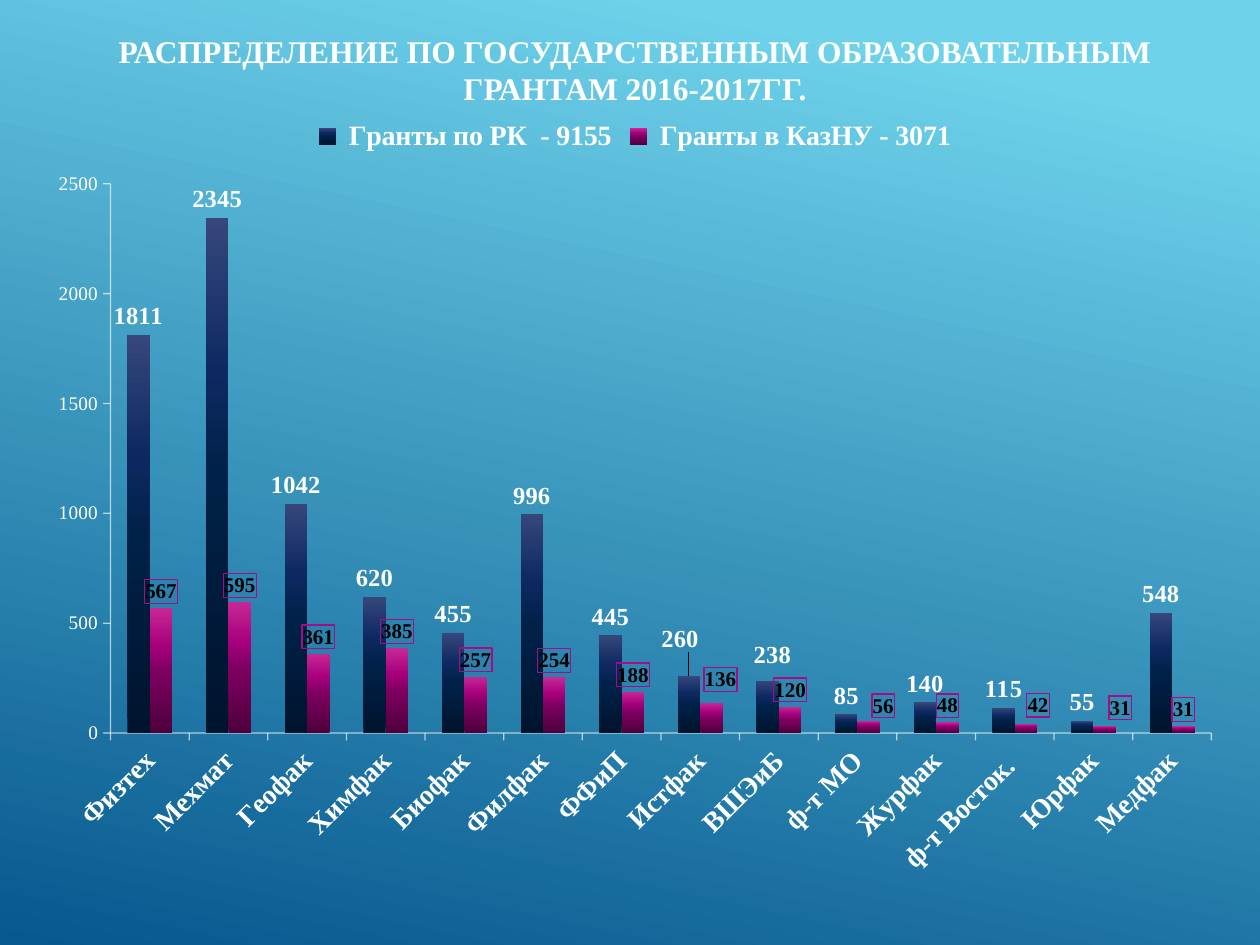
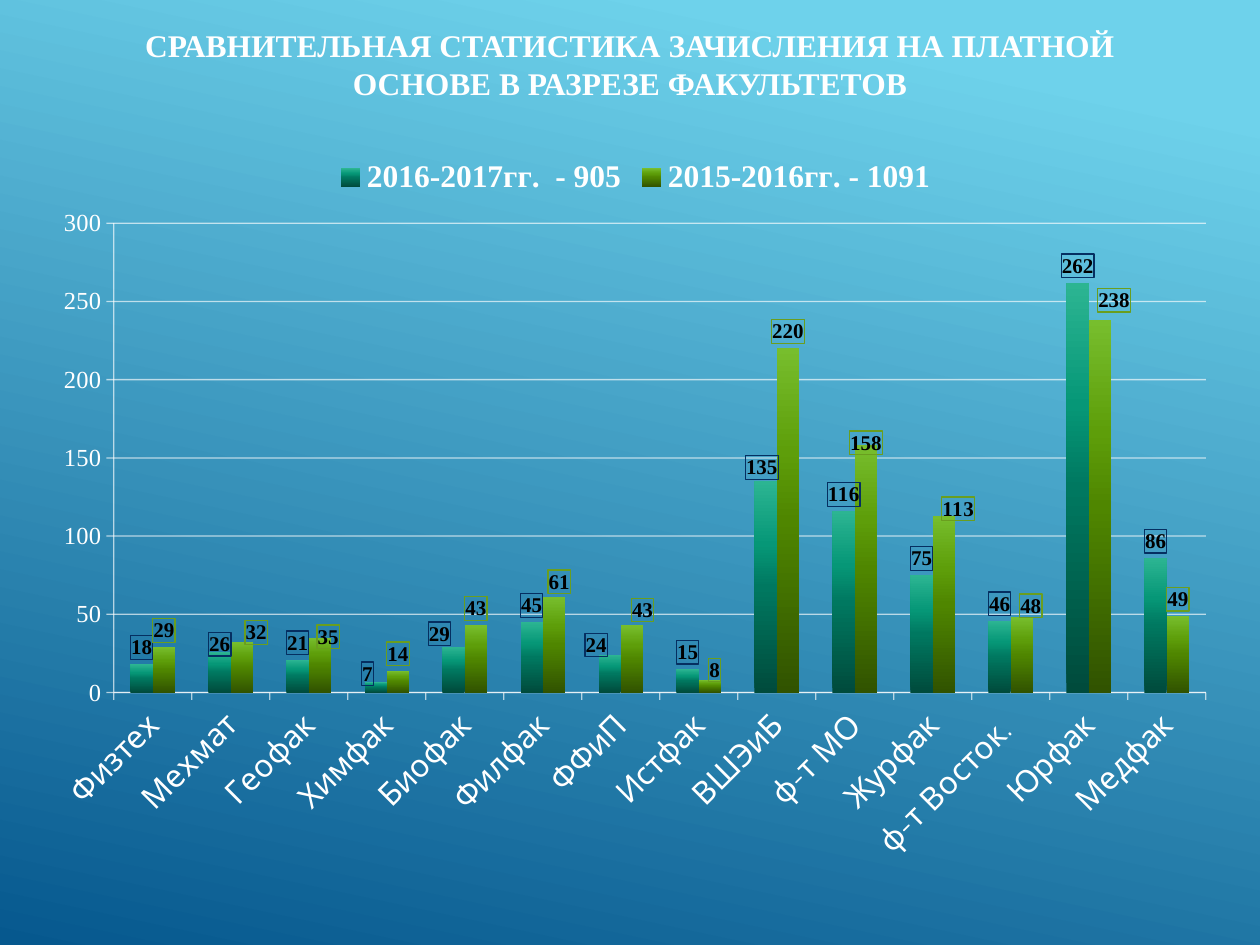
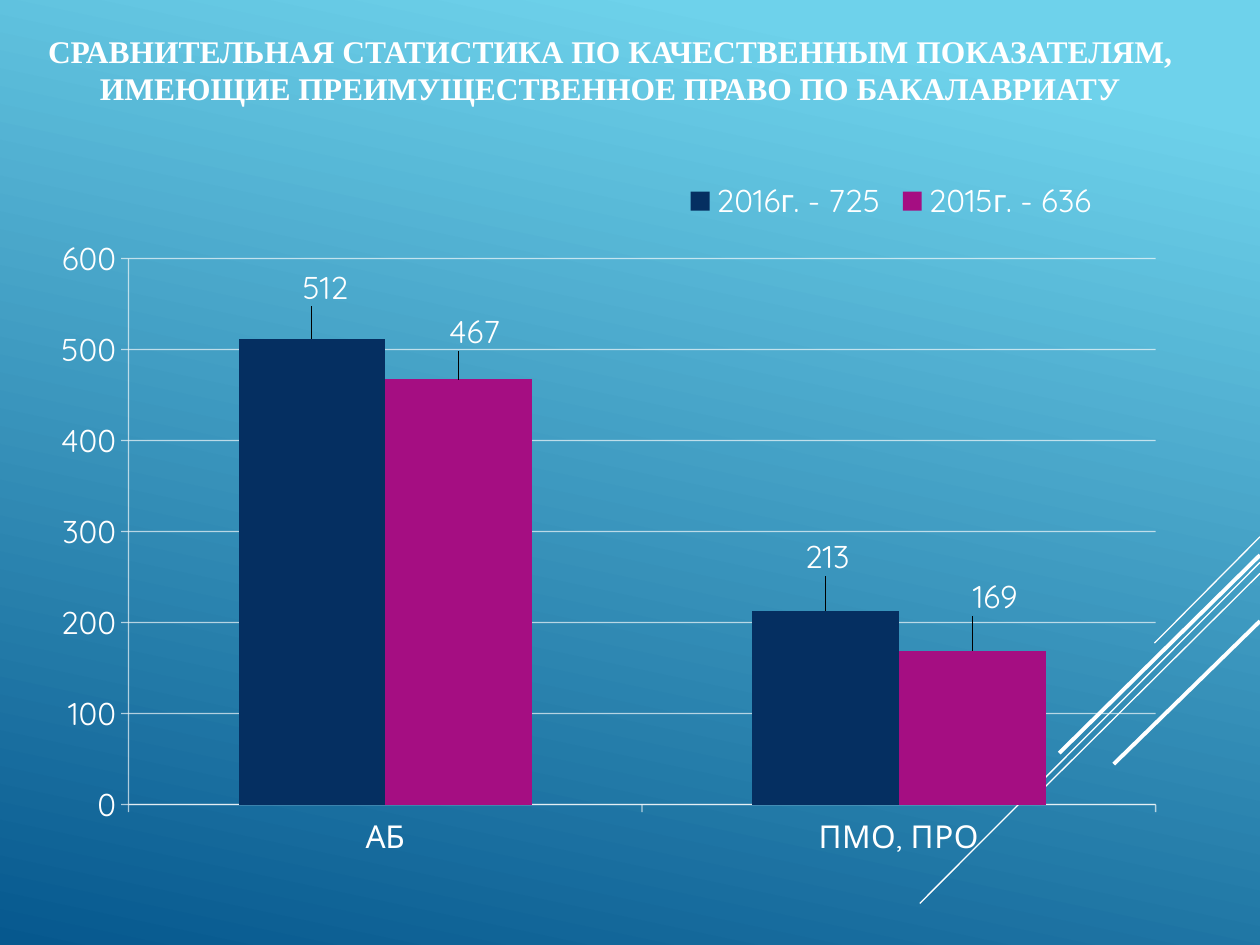
from dataclasses import dataclass, field

from lxml import etree
from pptx import Presentation
from pptx.chart.data import CategoryChartData
from pptx.dml.color import RGBColor
from pptx.enum.chart import XL_CHART_TYPE as ChartType
from pptx.enum.chart import XL_LABEL_POSITION as LabelPosition
from pptx.enum.chart import XL_LEGEND_POSITION as LegendPosition
from pptx.enum.shapes import MSO_CONNECTOR as Connector
from pptx.enum.text import MSO_ANCHOR as Anchor
from pptx.enum.text import MSO_AUTO_SIZE as AutoSize
from pptx.enum.text import PP_ALIGN as Align
from pptx.oxml import parse_xml
from pptx.oxml.ns import nsdecls, qn
from pptx.util import Inches, Pt

COLUMNS, ROWS = 100, 75
CELL = Inches(0.1)


@dataclass(frozen=True)
class Theme:
    serif: str = "Times New Roman"
    sans: str = "Quicksand"
    white: str = "FFFFFF"
    black: str = "000000"
    navy: str = "052F61"
    magenta: str = "A50E82"
    green: str = "6A9E1F"
    title_size: int = 18
    axis_opacity: int = 65
    background: tuple = ((10, "6ED2EB"), (100, "06588E"))
    navy_gradient: tuple = ((0, "00142D"), (50, "002148"), (70, "0E2962"), (100, "36477C"))
    magenta_gradient: tuple = ((0, "4E003C"), (50, "7E0061"), (70, "A7007C"), (100, "C72796"))
    teal_gradient: tuple = ((0, "004B3C"), (50, "007860"), (70, "069777"), (100, "2CB592"))
    green_gradient: tuple = ((0, "315300"), (50, "4F8600"), (70, "5E9E0A"), (100, "77BE2D"))


THEME = Theme()


@dataclass(frozen=True)
class TextStyle:
    size: int = 18
    bold: bool = False
    name: str = THEME.sans
    color: str = THEME.white


def serif(size, bold=True, color=THEME.white):
    return TextStyle(size, bold, THEME.serif, color)


@dataclass
class Series:
    name: str
    values: tuple
    fill: object
    label: TextStyle = TextStyle()
    border: str = ""
    shifts: dict = field(default_factory=dict)


@dataclass
class Panel:
    box: tuple
    categories: tuple
    series: tuple
    maximum: int
    step: int
    category_text: TextStyle = TextStyle()
    value_text: TextStyle = TextStyle()
    legend_text: TextStyle = TextStyle()
    slanted: bool = True
    grid: bool = True
    plot: tuple = ()
    legend_box: tuple = ()


def place(box):
    return [round(length * CELL) for length in box]


def style_font(font, style):
    font.name, font.size, font.bold = style.name, Pt(style.size), style.bold
    font.color.rgb = RGBColor.from_string(style.color)


def style_line(line, color, width=0.75):
    line.color.rgb = RGBColor.from_string(color)
    line.width = Pt(width)


def style_axis_line(line, parent):
    style_line(line, THEME.white)
    color = parent.find(f"{qn('c:spPr')}/{qn('a:ln')}/{qn('a:solidFill')}/{qn('a:srgbClr')}")
    etree.SubElement(color, qn("a:alpha"), val=str(THEME.axis_opacity * 1000))


def fill_gradient(fill, parent, stops, angle):
    fill.gradient()
    fill.gradient_angle = angle
    stop_list = parent.find(".//" + qn("a:gsLst"))
    for stop in list(stop_list):
        stop_list.remove(stop)
    for percent, color in stops:
        stop = etree.SubElement(stop_list, qn("a:gs"), pos=str(percent * 1000))
        etree.SubElement(stop, qn("a:srgbClr"), val=color)


def set_layout(element, index, percents, modes=()):
    for old in element.findall(qn("c:layout")):
        element.remove(old)
    layout = parse_xml(f"<c:layout {nsdecls('c')}><c:manualLayout/></c:layout>")
    settings = list(modes) + [(key, f"{share / 100:.4f}") for key, share in zip("xywh", percents)]
    for key, value in settings:
        etree.SubElement(layout[0], qn("c:" + key), val=value)
    element.insert(index, layout)


EDGES = (("xMode", "edge"), ("yMode", "edge"))


def add_title(slide, box, text):
    title = slide.shapes.title
    title.left, title.top, title.width, title.height = place(box)
    frame = title.text_frame
    frame.text = text
    frame.word_wrap = True
    frame.auto_size = AutoSize.NONE
    frame.vertical_anchor = Anchor.TOP
    paragraph = frame.paragraphs[0]
    paragraph.alignment = Align.CENTER
    style_font(paragraph.runs[0].font, serif(THEME.title_size))


def hide_leader_lines(labels):
    labels._element.append(parse_xml(
        f'<c:extLst {nsdecls("c")}><c:ext uri="{{CE6537A1-D6FC-4f65-9D91-7224C49458BB}}" '
        'xmlns:c15="http://schemas.microsoft.com/office/drawing/2012/chart">'
        '<c15:showLeaderLines val="0"/></c:ext></c:extLst>'))


def style_series(plotted, series):
    fill = plotted.format.fill
    if isinstance(series.fill, str):
        fill.solid()
        fill.fore_color.rgb = RGBColor.from_string(series.fill)
    else:
        fill_gradient(fill, plotted._element, series.fill, 90)
    plotted.invert_if_negative = False
    labels = plotted.data_labels
    labels.show_value = True
    point_labels = [plotted.points[index].data_label for index in series.shifts]
    for label in [labels, *point_labels]:
        style_font(label.font, series.label)
        label.position = LabelPosition.OUTSIDE_END
    for element in plotted._element.iter(qn("c:dLbl")):
        index = int(element.find(qn("c:idx")).get("val"))
        set_layout(element, 1, series.shifts[index])
    if series.border:
        for text in list(plotted._element.iter(qn("c:txPr"))):
            text.addprevious(parse_xml(
                f'<c:spPr {nsdecls("c", "a")}><a:noFill/><a:ln w="9525"><a:solidFill>'
                f'<a:srgbClr val="{series.border}"/></a:solidFill></a:ln></c:spPr>'))
    hide_leader_lines(labels)


def style_axes(chart, panel):
    category, value = chart.category_axis, chart.value_axis
    for axis, style in ((category, panel.category_text), (value, panel.value_text)):
        style_font(axis.tick_labels.font, style)
        style_axis_line(axis.format.line, axis._element)
    if panel.slanted:
        category._element.find(f"{qn('c:txPr')}/{qn('a:bodyPr')}").set("rot", "-2700000")
    value.minimum_scale, value.maximum_scale, value.major_unit = 0, panel.maximum, panel.step
    value.has_major_gridlines = panel.grid
    if panel.grid:
        style_axis_line(value.major_gridlines.format.line,
                        value._element.find(qn("c:majorGridlines")))


def add_legend(chart, panel):
    chart.has_legend = True
    legend = chart.legend
    legend.position = LegendPosition.RIGHT if panel.legend_box else LegendPosition.TOP
    legend.include_in_layout = False
    style_font(legend.font, panel.legend_text)
    if panel.legend_box:
        set_layout(legend._element, 1, panel.legend_box, EDGES)


def add_chart_panel(slide, panel):
    data = CategoryChartData()
    data.categories = panel.categories
    for series in panel.series:
        data.add_series(series.name, series.values)
    chart = slide.shapes.add_chart(ChartType.COLUMN_CLUSTERED, *place(panel.box), data).chart
    chart.has_title = False
    style_font(chart.font, TextStyle())
    plot = chart.plots[0]
    plot.gap_width, plot.overlap, plot.vary_by_categories = 150, 0, False
    for plotted, series in zip(plot.series, panel.series):
        style_series(plotted, series)
    style_axes(chart, panel)
    add_legend(chart, panel)
    if panel.plot:
        plot_area = chart._chartSpace.find(".//" + qn("c:plotArea"))
        set_layout(plot_area, 0, panel.plot, (("layoutTarget", "inner"), *EDGES))


def add_diagonals(slide, box):
    left, top, width, height = box
    strokes = ((1, 0, 0.69, 0.29, 0.75), (1, 0.07, 0, 1, 0.75), (1, 0.1, 0.36, 0.69, 0.75),
               (1, 0.05, 0.41, 0.59, 2.25), (1, 0.23, 0.57, 0.62, 2.25))
    for x1, y1, x2, y2, weight in strokes:
        ends = place((left + x1 * width, top + y1 * height, left + x2 * width, top + y2 * height))
        line = slide.shapes.add_connector(Connector.STRAIGHT, *ends)
        style_line(line.line, THEME.white, weight)
        etree.SubElement(line._element.spPr, qn("a:effectLst"))


FACULTIES = ("Физтех", "Мехмат", "Геофак", "Химфак", "Биофак", "Филфак", "ФФиП", "Истфак",
             "ВШЭиБ", "ф-т МО", "Журфак", "ф-т Восток. ", "Юрфак", "Медфак")

GRANTS = Panel(
    box=(2.75, 8.4, 95.3, 62.2), categories=FACULTIES, maximum=2500, step=500, grid=False,
    category_text=serif(16), value_text=serif(11, False), legend_text=serif(16),
    series=(
        Series(" Гранты по РК  - 9155",
               (1811, 2345, 1042, 620, 455, 996, 445, 260, 238, 85, 140, 115, 55, 548),
               THEME.navy_gradient, serif(14),
               shifts={7: (-0.75, -2.3), 8: (0.4, -0.9)}),
        Series(" Гранты в КазНУ - 3071",
               (567, 595, 361, 385, 257, 254, 188, 136, 120, 56, 48, 42, 31, 31),
               THEME.magenta_gradient, serif(12, color=THEME.black), THEME.magenta,
               {7: (0.75, -0.9), 9: (1.2, 0.25), 11: (1, -0.25), 12: (1.3, -0.2)})))

PAID = Panel(
    box=(3.6, 11.5, 93.7, 59.8), categories=FACULTIES, maximum=300, step=50,
    value_text=serif(14, False), legend_text=serif(18), plot=(5.8, 10.4, 92.5, 62.3),
    series=(
        Series("2016-2017гг.  - 905",
               (18, 26, 21, 7, 29, 45, 24, 15, 135, 116, 75, 46, 262, 86),
               THEME.teal_gradient, serif(12, color=THEME.black), THEME.navy,
               {1: (0, 1.2), 3: (-0.7, 1.2), 4: (-1.2, 0.45), 6: (-1.15, 0.9),
                8: (-0.33, 0.4)}),
        Series("2015-2016гг. - 1091",
               (29, 32, 35, 14, 43, 61, 43, 8, 220, 158, 113, 48, 238, 49),
               THEME.green_gradient, serif(12, color=THEME.black), THEME.green,
               {1: (1.2, 0.9), 2: (0.7, 2.1), 5: (0.45, 0.2), 6: (0.9, 0.2), 7: (0.4, 0.9),
                9: (0, 1.9), 10: (1.2, 1.3), 11: (0.75, 0.7), 12: (1.2, -0.45)})))

QUALITY = Panel(
    box=(3.55, 10.75, 93.7, 61.4), categories=("АБ", "ПМО, ПРО"), maximum=600, step=100,
    slanted=False, plot=(7.1, 15.9, 87, 70.6), legend_box=(53.7, 5.5, 36, 6),
    series=(
        Series("2016г. - 725", (512, 213), THEME.navy,
               shifts={0: (1.15, -3.45), 1: (0.15, -3.8)}),
        Series("2015г. - 636", (467, 169), THEME.magenta,
               shifts={0: (1.35, -3), 1: (1.95, -3.8)})))

SLIDES = (
    ((5.9, 2, 89, 7.1),
     "РАСПРЕДЕЛЕНИЕ ПО ГОСУДАРСТВЕННЫМ ОБРАЗОВАТЕЛЬНЫМ ГРАНТАМ 2016-2017ГГ.", GRANTS, ()),
    ((5.1, 1.55, 89.8, 7.1),
     "СРАВНИТЕЛЬНАЯ СТАТИСТИКА ЗАЧИСЛЕНИЯ НА ПЛАТНОЙ ОСНОВЕ В РАЗРЕЗЕ ФАКУЛЬТЕТОВ", PAID, ()),
    ((2.8, 2, 91.3, 10.1),
     "СРАВНИТЕЛЬНАЯ СТАТИСТИКА ПО КАЧЕСТВЕННЫМ ПОКАЗАТЕЛЯМ, "
     "ИМЕЮЩИЕ ПРЕИМУЩЕСТВЕННОЕ ПРАВО ПО БАКАЛАВРИАТУ", QUALITY, (73, 42.6, 27, 29.1)),
)


def main():
    presentation = Presentation()
    presentation.slide_width, presentation.slide_height = place((COLUMNS, ROWS))
    master = presentation.slide_master
    fill_gradient(master.background.fill, master._element, THEME.background, 258)
    for title_box, title, panel, diagonals_box in SLIDES:
        slide = presentation.slides.add_slide(presentation.slide_layouts[5])
        add_title(slide, title_box, title)
        if diagonals_box:
            add_diagonals(slide, diagonals_box)
        add_chart_panel(slide, panel)
    presentation.save("out.pptx")


if __name__ == "__main__":
    main()
